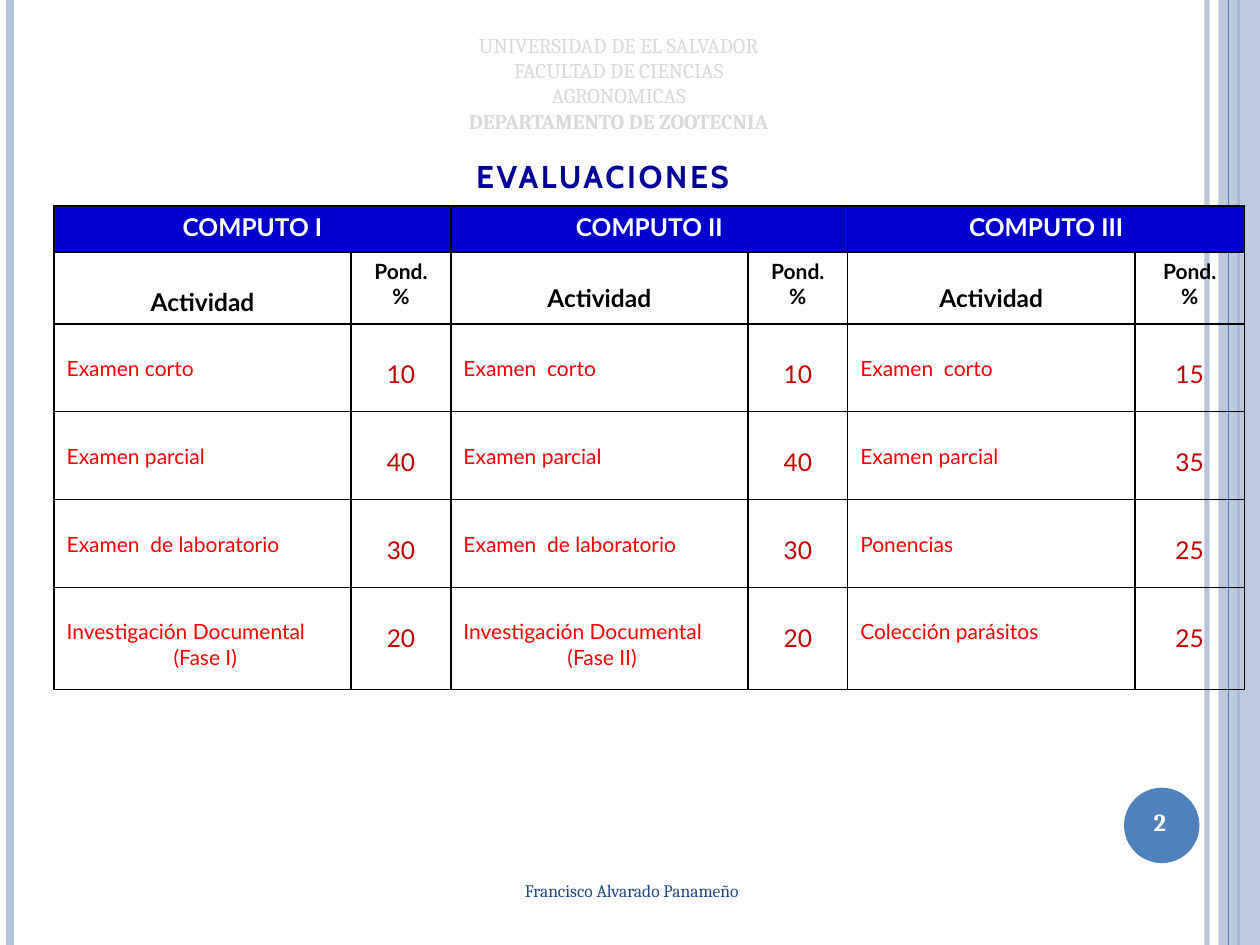
"""Build the course evaluation slide with its weighting table."""
from lxml import etree
from pptx import Presentation
from pptx.dml.color import RGBColor
from pptx.enum.shapes import MSO_CONNECTOR, MSO_SHAPE
from pptx.enum.text import MSO_ANCHOR, PP_ALIGN
from pptx.oxml.ns import qn
from pptx.util import Cm, Pt

LINE = MSO_CONNECTOR.STRAIGHT
RECT, OVAL = MSO_SHAPE.RECTANGLE, MSO_SHAPE.OVAL
TOP, MIDDLE = MSO_ANCHOR.TOP, MSO_ANCHOR.MIDDLE
CENTER, JUSTIFY = PP_ALIGN.CENTER, PP_ALIGN.JUSTIFY
PALE = RGBColor(0xB3, 0xC1, 0xDB)
STEEL = RGBColor(0x4F, 0x81, 0xBD)
SLATE = RGBColor(0x1F, 0x49, 0x7D)
NAVY = RGBColor(0x00, 0x00, 0x99)
BLUE = RGBColor(0x00, 0x00, 0xCC)
RED = RGBColor(0xFF, 0x00, 0x00)
DARK = RGBColor(0xC0, 0x00, 0x00)
GRAY = RGBColor(0xD9, 0xD9, 0xD9)
BLACK = RGBColor(0x00, 0x00, 0x00)
WHITE = RGBColor(0xFF, 0xFF, 0xFF)


def write(frame, lines, face, size, color, bold=False, align=CENTER):
    for i, line in enumerate(lines):
        para = frame.add_paragraph() if i else frame.paragraphs[0]
        para.text = line
        para.alignment = align
        font = para.font
        font.name, font.size, font.bold = face, Pt(size), bold
        font.color.rgb = color


def fade(shape, percent):
    for tint in shape._element.spPr.iter(qn("a:srgbClr")):
        etree.SubElement(tint, qn("a:alpha"), val=str(percent * 1000))


deck = Presentation()
deck.slide_width, deck.slide_height = Cm(25.4), Cm(19.05)
slide = deck.slides.add_slide(deck.slide_layouts[6])
shapes = slide.shapes

bars = [(24.33, PALE, 3, 93), (0.2, PALE, 4.5, 100), (24.97, STEEL, 1.5, 100),
        (24.77, STEEL, 0.75, 100)]
for i, (x, color, width, solid) in enumerate(bars):
    if i == 3:
        band = shapes.add_shape(RECT, Cm(24.56), 0, Cm(0.84), Cm(19.05))
        band.fill.solid()
        band.fill.fore_color.rgb = PALE
        band.line.fill.background()
        band.shadow.inherit = False
        fade(band, 87)
    bar = shapes.add_connector(LINE, Cm(x), 0, Cm(x), Cm(19.05))
    bar.line.color.rgb = color
    bar.line.width = Pt(width)
    etree.SubElement(bar._element.spPr, qn("a:effectLst"))
    if solid < 100:
        fade(bar, solid)

disc = shapes.add_shape(OVAL, Cm(22.66), Cm(15.88), Cm(1.52), Cm(1.52))
disc.fill.solid()
disc.fill.fore_color.rgb = STEEL
disc.line.fill.background()
disc.shadow.inherit = False

labels = [
    ((8.71, 17.32, 8.05, 1.27), ["Francisco Alvarado Panameño"], "Cambria", 10, SLATE, False, MIDDLE),
    ((22.91, 15.93, 0.94, 1.27), ["2"], "Cambria", 14, WHITE, True, MIDDLE),
    ((9.35, 3.05, 6.22, 1.02), ["EVALUACIONES"], "Cabin", 18, NAVY, True, TOP),
    ((8.79, 0.53, 7.37, 1.8), ["UNIVERSIDAD DE EL SALVADOR", "FACULTAD DE CIENCIAS AGRONOMICAS",
                               "DEPARTAMENTO DE ZOOTECNIA"], "Cambria", 12, GRAY, False, TOP),
]
for place, lines, face, size, color, bold, anchor in labels:
    box = shapes.add_textbox(*map(Cm, place))
    frame = box.text_frame
    frame.word_wrap = lines != ["EVALUACIONES"]
    frame.vertical_anchor = anchor
    write(frame, lines, face, size, color, bold)
    if face == "Cabin":
        frame.paragraphs[0].alignment = JUSTIFY
        frame.paragraphs[0].runs[0].font._element.set("spc", "150")
frame.paragraphs[-1].font.bold = True

widths = [5.99, 2.01, 5.99, 2.01, 5.79, 2.21]
heights = [0.93, 1.45, 1.77, 1.77, 1.77, 2.06]
terms = [
    ("COMPUTO I", [("Examen corto", 10), ("Examen parcial", 40), ("Examen  de laboratorio", 30),
                   ("Investigación Documental\n (Fase I)", 20)]),
    ("COMPUTO II", [("Examen  corto", 10), ("Examen parcial", 40), ("Examen  de laboratorio", 30),
                    ("Investigación Documental\n (Fase II)", 20)]),
    ("COMPUTO III", [("Examen  corto", 15), ("Examen parcial", 35), ("Ponencias", 25),
                     ("Colección parásitos", 25)]),
]
table = shapes.add_table(6, 6, Cm(1.09), Cm(4.15), Cm(24), Cm(9.75)).table
table.first_row = table.horz_banding = False
for column, width in zip(table.columns, widths):
    column.width = Cm(width)
for row, height in zip(table.rows, heights):
    row.height = Cm(height)

for cell in table.iter_cells():
    props = cell._tc.get_or_add_tcPr()
    for side in ("lnL", "lnR", "lnT", "lnB"):
        edge = etree.SubElement(props, qn("a:" + side), w=str(Pt(1)))
        fill = etree.SubElement(edge, qn("a:solidFill"))
        etree.SubElement(fill, qn("a:srgbClr"), val=str(BLACK))
    cell.fill.background()

for i, (title, tasks) in enumerate(terms):
    left, right = 2 * i, 2 * i + 1
    head = table.cell(0, left)
    head.merge(table.cell(0, right))
    for cell in (head, table.cell(0, right)):
        cell.fill.solid()
        cell.fill.fore_color.rgb = BLUE
    write(head.text_frame, [title], "Lato", 14, WHITE, True)
    name, share = table.cell(1, left), table.cell(1, right)
    name.margin_top = Cm(0.64 if i else 0.72)
    write(name.text_frame, ["Actividad"], "Lato", 14, BLACK, True)
    write(share.text_frame, ["Pond.", "%"], "Lato", 12, BLACK, True)
    for j, (task, weight) in enumerate(tasks, 2):
        name, share = table.cell(j, left), table.cell(j, right)
        name.margin_top, share.margin_top = Cm(0.64), Cm(0.72)
        write(name.text_frame, task.split("\n"), "Lato", 12, RED, align=JUSTIFY)
        for para in name.text_frame.paragraphs[1:]:
            para.alignment = CENTER
        write(share.text_frame, [str(weight)], "Lato", 14, DARK)

deck.save("out.pptx")
